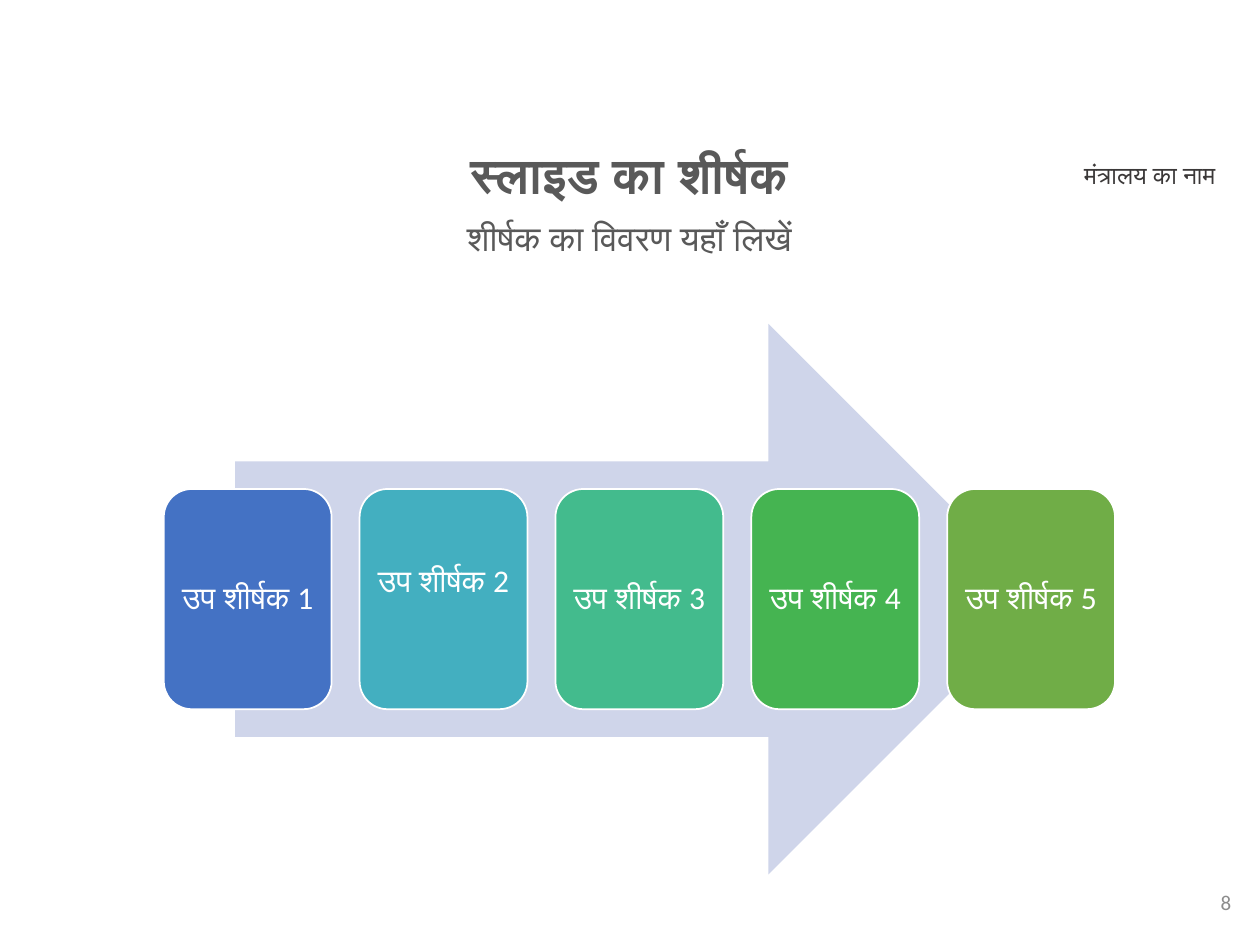
from pptx import Presentation
from pptx.dml.color import RGBColor
from pptx.enum.shapes import MSO_SHAPE as SHAPE
from pptx.enum.text import MSO_ANCHOR as ANCHOR, PP_ALIGN as ALIGN
from pptx.util import Inches, Pt

FONT = "Calibri"
WHITE = RGBColor(0xFF, 0xFF, 0xFF)
HEADING = RGBColor(0x59, 0x59, 0x59)
MINISTRY = RGBColor(0x3B, 0x38, 0x38)
NUMBER = RGBColor(0x8C, 0x8C, 0x8C)
ARROW = RGBColor(0xCF, 0xD5, 0xEA)
BLUE = RGBColor(0x44, 0x72, 0xC4)
TEAL = RGBColor(0x43, 0xAF, 0xC0)
MINT = RGBColor(0x43, 0xBB, 0x8D)
GREEN = RGBColor(0x45, 0xB4, 0x51)
OLIVE = RGBColor(0x70, 0xAD, 0x47)
STEPS = [
    ("उप शीर्षक 1", BLUE, 0),
    ("उप शीर्षक 2", TEAL, 0.27),
    ("उप शीर्षक 3", MINT, 0),
    ("उप शीर्षक 4", GREEN, 0),
    ("उप शीर्षक 5", OLIVE, 0),
]


def write(tf, text, size, color, align=ALIGN.CENTER, bold=False, spacing=0.9):
    """Fill a text frame with one styled paragraph."""
    tf.word_wrap = True
    p = tf.paragraphs[0]
    p.text = text
    p.alignment = align
    p.line_spacing = spacing
    p.font.name, p.font.size, p.font.bold = FONT, Pt(size), bold
    p.font.color.rgb = color


def add_label(s, box, text, size, color, anchor=ANCHOR.TOP, **style):
    """Place a text box in the given box."""
    tf = s.shapes.add_textbox(*map(Inches, box)).text_frame
    tf.vertical_anchor = anchor
    write(tf, text, size, color, **style)


def add_block(s, kind, box, fill):
    """Place a flat, unlined shape in the given box."""
    sp = s.shapes.add_shape(kind, *map(Inches, box))
    sp.shadow.inherit = False
    sp.fill.solid()
    sp.fill.fore_color.rgb = fill
    sp.line.fill.background()
    return sp


def add_card(s, box, text, fill, lift):
    """Place one rounded step card, its text raised by a deeper lower margin."""
    sp = add_block(s, SHAPE.ROUNDED_RECTANGLE, box, fill)
    sp.line.color.rgb = WHITE
    sp.line.width = Pt(1)
    tf = sp.text_frame
    tf.margin_left = tf.margin_right = Inches(0.05)
    tf.margin_top, tf.margin_bottom = Inches(0.07), Inches(0.07 + lift)
    tf.vertical_anchor = ANCHOR.MIDDLE
    write(tf, text, 18, WHITE)


def add_process(s, box, steps):
    """Spread step cards across a broad arrow."""
    x, y, w, h = box
    add_block(s, SHAPE.RIGHT_ARROW, (x + 0.075 * w, y, 0.85 * w, h), ARROW)
    card = w / (len(steps) + (len(steps) - 1) / 6)
    for i, (text, fill, lift) in enumerate(steps):
        place = (x + i * card * 7 / 6, y + 0.3 * h, card, 0.4 * h)
        add_card(s, place, text, fill, lift)


def add_header(s, box):
    """Stack the title over its description."""
    x, y, w, h = box
    add_label(s, (x, y, w, 0.4 * h), "स्लाइड का शीर्षक", 28, HEADING, bold=True)
    add_label(s, (x, y + 0.47 * h, w, 0.53 * h),
              "शीर्षक का विवरण यहाँ लिखें", 20, HEADING)


def main():
    """Build and save the slide."""
    prs = Presentation()
    prs.slide_width, prs.slide_height = Inches(10), Inches(7.5)
    s = prs.slides.add_slide(prs.slide_layouts[6])
    add_label(s, (8.31, 1.22, 1.63, 0.34), "मंत्रालय का नाम", 14, MINISTRY,
              spacing=1.0)
    add_label(s, (7.62, 6.96, 2.25, 0.4), "8", 12, NUMBER, ANCHOR.MIDDLE,
              align=ALIGN.RIGHT, spacing=1.0)
    add_header(s, (1.46, 1.15, 7.07, 1.18))
    add_process(s, (1.3, 2.57, 7.55, 4.37), STEPS)
    prs.save("out.pptx")


if __name__ == "__main__":
    main()
